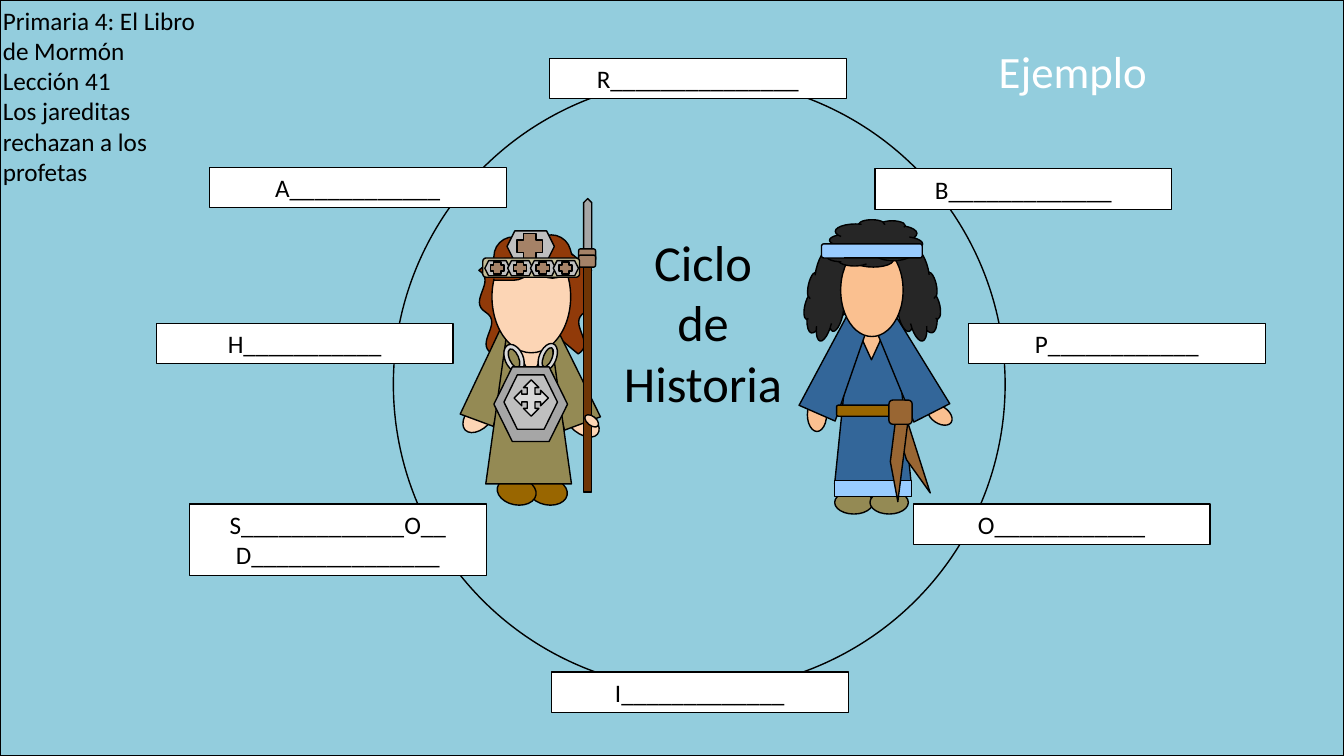
from dataclasses import dataclass
from typing import Optional

from pptx import Presentation
from pptx.dml.color import RGBColor
from pptx.enum.shapes import MSO_SHAPE as Form
from pptx.enum.text import MSO_ANCHOR as Anchor
from pptx.enum.text import MSO_AUTO_SIZE as Fit
from pptx.enum.text import PP_ALIGN as Align
from pptx.oxml.xmlchemy import OxmlElement as Element
from pptx.util import Pt

BLACK = RGBColor(0x00, 0x00, 0x00)
WHITE = RGBColor(0xFF, 0xFF, 0xFF)
SKY = RGBColor(0x93, 0xCD, 0xDD)
RUST = RGBColor(0x91, 0x3A, 0x09)
PEACH = RGBColor(0xFC, 0xD5, 0xB5)
OLIVE = RGBColor(0x94, 0x8A, 0x54)
BROWN = RGBColor(0x99, 0x66, 0x00)
PALE = RGBColor(0xD9, 0xD9, 0xD9)
SILVER = RGBColor(0xBF, 0xBF, 0xBF)
STEEL = RGBColor(0xA6, 0xA6, 0xA6)
WOOD = RGBColor(0x6F, 0x35, 0x05)
BRONZE = RGBColor(0xA5, 0x82, 0x67)
SAND = RGBColor(0xC4, 0xBD, 0x97)
TAN = RGBColor(0xFA, 0xC0, 0x90)
COAL = RGBColor(0x26, 0x26, 0x26)
BLUE = RGBColor(0x33, 0x66, 0x99)
LIGHT = RGBColor(0x99, 0xCC, 0xFF)
HIDE = RGBColor(0x99, 0x66, 0x33)

WIDE, HIGH = 960, 540


@dataclass(frozen=True)
class Part:
    form: Form
    x: float
    y: float
    w: float
    h: float
    fill: Optional[RGBColor]
    turn: float = 0
    flip: bool = False
    adjust: tuple = ()
    line: float = 1


@dataclass(frozen=True)
class Label:
    text: str
    x: float
    y: float
    h: float = 29


LABELS = [
    Label("R_______________", 392.4, 41.6),
    Label("I_____________", 393.8, 480),
    Label("B_____________", 625, 120.6),
    Label("P____________", 691.7, 231),
    Label("O____________", 652.3, 360),
    Label("S_____________O__\nD_______________", 135.3, 360, 51),
    Label("H___________", 111.6, 231),
    Label("A____________", 149.5, 119.4),
]

WAVE = (0.107, 0.1)
CURVE = (0.5, 0)

SPEARMAN = [
    Part(Form.DOUBLE_WAVE, 320.4, 197.3, 75.6, 32.4, RUST, 80.9, adjust=WAVE),
    Part(Form.DOUBLE_WAVE, 368.6, 197.3, 75.6, 32.4, RUST, 279.1, True, WAVE),
    Part(Form.OVAL, 328.3, 288.7, 28.1, 17.3, PEACH, 315.1),
    Part(Form.OVAL, 401.8, 293, 28.1, 16.6, PEACH, 38.7),
    Part(Form.TRAPEZOID, 340.6, 229.7, 25.2, 72.7, OLIVE, 20.3),
    Part(Form.TRAPEZOID, 391, 239, 27.4, 65.5, OLIVE, 339.7),
    Part(Form.OVAL, 377.3, 341.3, 28.1, 19.4, BROWN, 10.8),
    Part(Form.OVAL, 355, 341.3, 28.1, 19.4, BROWN, 10.8),
    Part(Form.TRAPEZOID, 347, 236.2, 61.2, 109.4, OLIVE),
    Part(Form.ISOSCELES_TRIANGLE, 369.4, 249.1, 20.2, 20.9, PEACH, 180),
    Part(Form.OVAL, 351.4, 172.1, 56.2, 79.9, PEACH),
    Part(Form.ROUND_2_DIAG_RECTANGLE, 352.8, 169.2, 28.1, 31, RUST, adjust=CURVE),
    Part(Form.ROUND_2_DIAG_RECTANGLE, 378.7, 169.2, 31, 28.1, RUST, 74.8, adjust=CURVE),
    Part(Form.OVAL, 344.9, 180, 32.4, 13.7, RUST, 315.4, line=0),
    Part(Form.OVAL, 390.2, 182.9, 32.4, 13.7, RUST, 43.1, line=0),
    Part(Form.DONUT, 360.7, 245.5, 13, 20.9, PALE, 336.4),
    Part(Form.DONUT, 385.2, 244.8, 12.2, 20.9, PALE, 22.5),
    Part(Form.HEXAGON, 352.8, 262.1, 52.6, 53.3, STEEL),
    Part(Form.HEXAGON, 360, 267.8, 38.2, 38.9, SILVER),
    Part(Form.QUAD_ARROW, 367.2, 271.4, 24.5, 25.9, PALE),
    Part(Form.PENTAGON, 399.6, 159.1, 40.3, 5.8, STEEL, 270),
    Part(Form.RECTANGLE, 416.9, 182.2, 5.8, 169.2, WOOD),
    Part(Form.ROUNDED_RECTANGLE, 413.3, 177.8, 12.2, 8.6, BRONZE),
    Part(Form.ROUNDED_RECTANGLE, 413.3, 182.2, 12.2, 8.6, BRONZE),
    Part(Form.OVAL, 416.9, 297.4, 11.5, 6.5, PEACH, 38.7),
    Part(Form.HEXAGON, 362.2, 164.9, 33.8, 22.3, SILVER),
    Part(Form.CROSS, 369.4, 167, 18, 18, BRONZE),
    Part(Form.ROUNDED_RECTANGLE, 344.9, 184.3, 69.1, 13.7, SAND),
]
for step in range(4):
    SPEARMAN += [
        Part(Form.HEXAGON, 346.3 + 16.3 * step, 186.2, 18, 10.8, SILVER),
        Part(Form.CROSS, 350.6 + 16.2 * step, 187.2, 9.4, 8.6, BRONZE),
    ]

SWORDSMAN = [
    Part(Form.OVAL, 665.3, 286.6, 12.2, 19.4, TAN, 304),
    Part(Form.OVAL, 596.2, 350.6, 27.4, 16.6, OLIVE),
    Part(Form.OVAL, 621.4, 350.6, 27.4, 16.6, OLIVE),
    Part(Form.CLOUD, 633.6, 173.5, 36, 70.6, COAL, 347.3, True),
    Part(Form.OVAL, 576.7, 284.4, 13.7, 23.8, TAN),
    Part(Form.FLOWCHART_MANUAL_OPERATION, 596.2, 238.3, 54.7, 107.3, BLUE, 180),
    Part(Form.RECTANGLE, 596.2, 343.4, 54.7, 11.5, LIGHT),
    Part(Form.FLOWCHART_EXTRACT, 610.6, 231.1, 23.8, 25.9, TAN, 180),
    Part(Form.FLOWCHART_MANUAL_OPERATION, 583.9, 226.8, 28.1, 71.3, BLUE, 203.6),
    Part(Form.FLOWCHART_MANUAL_OPERATION, 635, 227.5, 28.8, 71.3, BLUE, 153),
    Part(Form.CLOUD, 576.7, 173.5, 33.1, 70.6, COAL, 12.7),
    Part(Form.OVAL, 600.5, 174.2, 44.6, 66.2, TAN),
    Part(Form.CLOUD, 607.7, 139.7, 33.8, 68.4, COAL, 270, True),
    Part(Form.ROUNDED_RECTANGLE, 586.8, 174.2, 72, 10.1, LIGHT),
    Part(Form.ROUNDED_RECTANGLE, 597.6, 289.4, 50.4, 7.9, BROWN),
    Part(Form.DIAGONAL_STRIPE, 645.8, 293.8, 18.7, 58.3, HIDE, 324.5),
    Part(Form.DIAGONAL_STRIPE, 635.8, 298.8, 18.7, 58.3, HIDE, 349.4),
    Part(Form.ROUNDED_RECTANGLE, 635, 285.8, 16.6, 17.3, HIDE),
]


def draw(shapes, part: Part):
    shape = shapes.add_shape(part.form, Pt(part.x), Pt(part.y), Pt(part.w), Pt(part.h))
    shape.shadow.inherit = False
    shape.rotation = part.turn
    for place, value in enumerate(part.adjust):
        shape.adjustments[place] = value
    if part.flip:
        shape._element.spPr.xfrm.set("flipH", "1")
    if part.fill is None:
        shape.fill.background()
    else:
        shape.fill.solid()
        shape.fill.fore_color.rgb = part.fill
    if part.line:
        shape.line.color.rgb = BLACK
        shape.line.width = Pt(part.line)
    else:
        shape.line.fill.background()
    return shape


def write(shape, text: str, *, size: float = 18, color: RGBColor = BLACK,
          align: Align = Align.LEFT, anchor: Anchor = Anchor.TOP, left: float = 7.2) -> None:
    frame = shape.text_frame
    frame.text = text
    frame.word_wrap = True
    frame.auto_size = Fit.NONE
    frame.vertical_anchor = anchor
    frame.margin_left, frame.margin_right = Pt(left), Pt(7.2)
    frame.margin_top = frame.margin_bottom = Pt(3.6)
    for para in frame.paragraphs:
        para.alignment = align
        para.line_spacing = 1.0
        para.space_before = para.space_after = Pt(0)
        props = para._p.get_or_add_pPr()
        props.set("marL", "0")
        props.set("indent", "0")
        props.append(Element("a:buNone"))
        for run in para.runs:
            run.font.size = Pt(size)
            run.font.name = "Calibri"
            run.font.color.rgb = color


def place(shape, x: float, y: float, w: float, h: float) -> None:
    shape.left, shape.top, shape.width, shape.height = Pt(x), Pt(y), Pt(w), Pt(h)


def main() -> None:
    deck = Presentation()
    deck.slide_width, deck.slide_height = Pt(WIDE), Pt(HIGH)
    slide = deck.slides.add_slide(deck.slide_layouts[1])
    shapes = slide.shapes
    title, lesson = slide.placeholders

    draw(shapes, Part(Form.RECTANGLE, 0, 0, WIDE, HIGH, SKY))
    draw(shapes, Part(Form.OVAL, 281, 56, 437, 437, None))
    for label in LABELS:
        box = draw(shapes, Part(Form.RECTANGLE, label.x, label.y, 212, label.h, WHITE, line=0.75))
        write(box, label.text, align=Align.CENTER)
    for figure in (SPEARMAN, SWORDSMAN):
        group = shapes.add_group_shape()
        for part in figure:
            draw(group.shapes, part)

    for holder in (lesson, title):
        shapes._spTree.append(holder._element)
    place(lesson, 0, 0, 157.7, 181.4)
    write(lesson, "Primaria 4: El Libro de Mormón\nLección\u00a041\n"
          "Los jareditas rechazan a los profetas", left=2)
    place(title, 402.5, 161.3, 199.4, 138.2)
    write(title, "Ciclo\nde\nHistoria", size=36, align=Align.CENTER)
    sample = shapes.add_textbox(Pt(706.3), Pt(27.4), Pt(144), Pt(46))
    write(sample, "Ejemplo", size=32, color=WHITE)

    deck.save("out.pptx")


if __name__ == "__main__":
    main()
